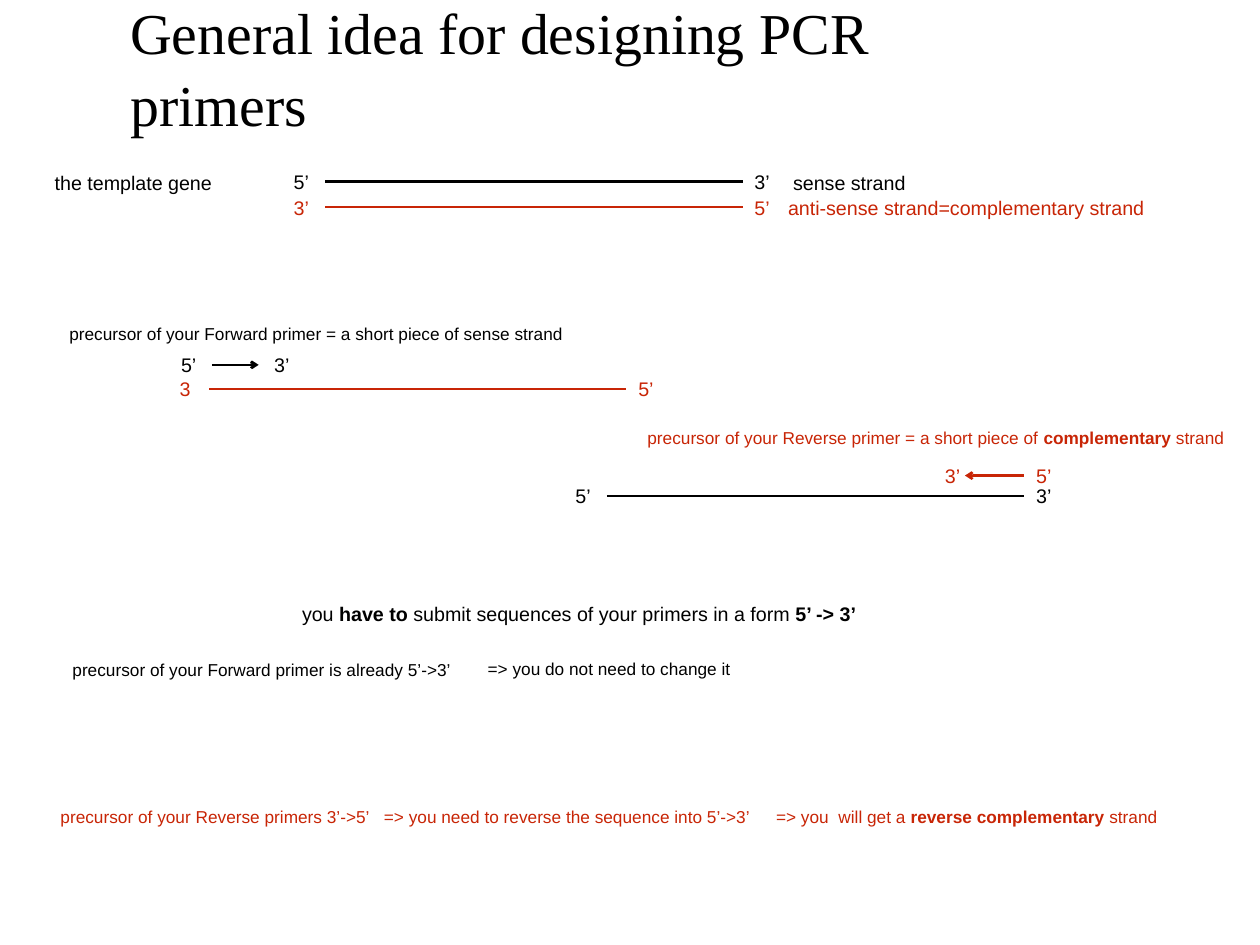
import dataclasses

import lxml.etree
import pptx
import pptx.dml.color
import pptx.enum.shapes
import pptx.enum.text
import pptx.oxml.ns
import pptx.util

PX = 9144  # EMU per px, 100 px to the inch
INSET = 6
TITLE_ONLY = 5


@dataclasses.dataclass(frozen=True)
class Theme:
    sense: str = "000000"
    antisense: str = "C82506"
    title_font: str = "Times New Roman"
    body_font: str = "Arial"
    title_size: int = 47
    large: int = 16
    small: int = 14
    line_width: int = 2


THEME = Theme()


def px(n):
    return pptx.util.Emu(round(n * PX))


def rgb(color):
    return pptx.dml.color.RGBColor.from_string(color)


def format_frame(tf, wrap):
    tf.word_wrap = wrap
    tf.auto_size = pptx.enum.text.MSO_AUTO_SIZE.NONE
    tf.vertical_anchor = pptx.enum.text.MSO_ANCHOR.MIDDLE
    tf.margin_left = tf.margin_right = px(INSET)
    tf.margin_top = tf.margin_bottom = px(INSET)


def add_run(p, text, font, size, color, bold=False):
    r = p.add_run()
    r.text = text
    r.font.name = font
    r.font.size = pptx.util.Pt(size)
    r.font.color.rgb = rgb(color)
    r.font.bold = bold


def set_title(s, text):
    sp = s.shapes.title
    sp.left, sp.top, sp.width, sp.height = px(141), px(32), px(1024), px(85)
    tf = sp.text_frame
    format_frame(tf, True)
    p = tf.paragraphs[0]
    p.alignment = pptx.enum.text.PP_ALIGN.LEFT
    p.line_spacing = 1.04
    add_run(p, text, THEME.title_font, THEME.title_size, THEME.sense)


def add_text(s, x, y, w, runs, size, color):
    """Add one centred line; every second run, from the second on, is bold."""
    h = 38 if size == THEME.large else 35
    sp = s.shapes.add_textbox(px(x), px(y), px(w), px(h))
    format_frame(sp.text_frame, False)
    p = sp.text_frame.paragraphs[0]
    p.alignment = pptx.enum.text.PP_ALIGN.CENTER
    for i, text in enumerate(runs):
        add_run(p, text, THEME.body_font, size, color, bold=i % 2 == 1)


def add_line(s, x1, x2, y, color, arrow=None):
    """Add a level line; arrow names the line end that has an arrowhead."""
    line = s.shapes.add_connector(
        pptx.enum.shapes.MSO_CONNECTOR.STRAIGHT, px(x1), px(y), px(x2), px(y))
    line.line.color.rgb = rgb(color)
    line.line.width = pptx.util.Pt(THEME.line_width)
    qn = pptx.oxml.ns.qn
    if arrow:
        ln = line.line._get_or_add_ln()
        lxml.etree.SubElement(ln, qn(f"a:{arrow}"), type="arrow")
    lxml.etree.SubElement(line._element.spPr, qn("a:effectLst"))


def add_strand(s, x1, x2, y, ends, color, gaps=(27, 22), arrow=None):
    """Add a strand with end labels centred at the given gaps from its ends."""
    add_line(s, x1, x2, y, color, arrow)
    for center, label in zip((x1 - gaps[0], x2 + gaps[1]), ends):
        add_text(s, center - 15, y - 19, 30, [label], THEME.large, color)


def main():
    prs = pptx.Presentation()
    prs.slide_width, prs.slide_height = px(1422), px(1067)
    s = prs.slides.add_slide(prs.slide_layouts[TITLE_ONLY])
    black, red = THEME.sense, THEME.antisense
    large, small = THEME.large, THEME.small

    set_title(s, "General idea for designing PCR primers")

    add_strand(s, 367, 838, 205, ("5’", "3’"), black)
    add_strand(s, 367, 838, 234, ("3’", "5’"), red)
    add_strand(s, 239, 292, 412, ("5’", "3’"), black, (26, 26), "tailEnd")
    add_strand(s, 236, 707, 439, ("3", "5’"), red)
    add_strand(s, 1089, 1156, 537, ("3’", "5’"), red, (14, 22), "headEnd")
    add_strand(s, 685, 1156, 560, ("5’", "3’"), black)

    captions = [
        (54, 187, 193, ["the template gene"], large, black),
        (888, 187, 141, ["sense strand"], large, black),
        (879, 215, 423, ["anti-sense strand=complementary strand"], large, red),
        (69, 359, 576,
         ["precursor of your Forward primer = a short piece of sense strand"],
         small, black),
        (722, 477, 668,
         ["precursor of your Reverse primer = a short piece of ",
          "complementary", " strand"], small, red),
        (331, 674, 645,
         ["you", " have to", " submit sequences of your primers in a form ",
          "5’ -> 3’"], large, black),
        (74, 739, 443,
         ["precursor of your Forward primer is already 5’->3’"], small, black),
        (541, 737, 293, ["=> you do not need to change it"], small, black),
        (61, 905, 364, ["precursor of your Reverse primers 3’->5’"], small, red),
        (424, 905, 432,
         ["=> you need to reverse the sequence into 5’->3’"], small, red),
        (865, 905, 452,
         ["=> you  will get a ", "reverse complementary", " strand"],
         small, red),
    ]
    for caption in captions:
        add_text(s, *caption)

    prs.save("out.pptx")


if __name__ == "__main__":
    main()
